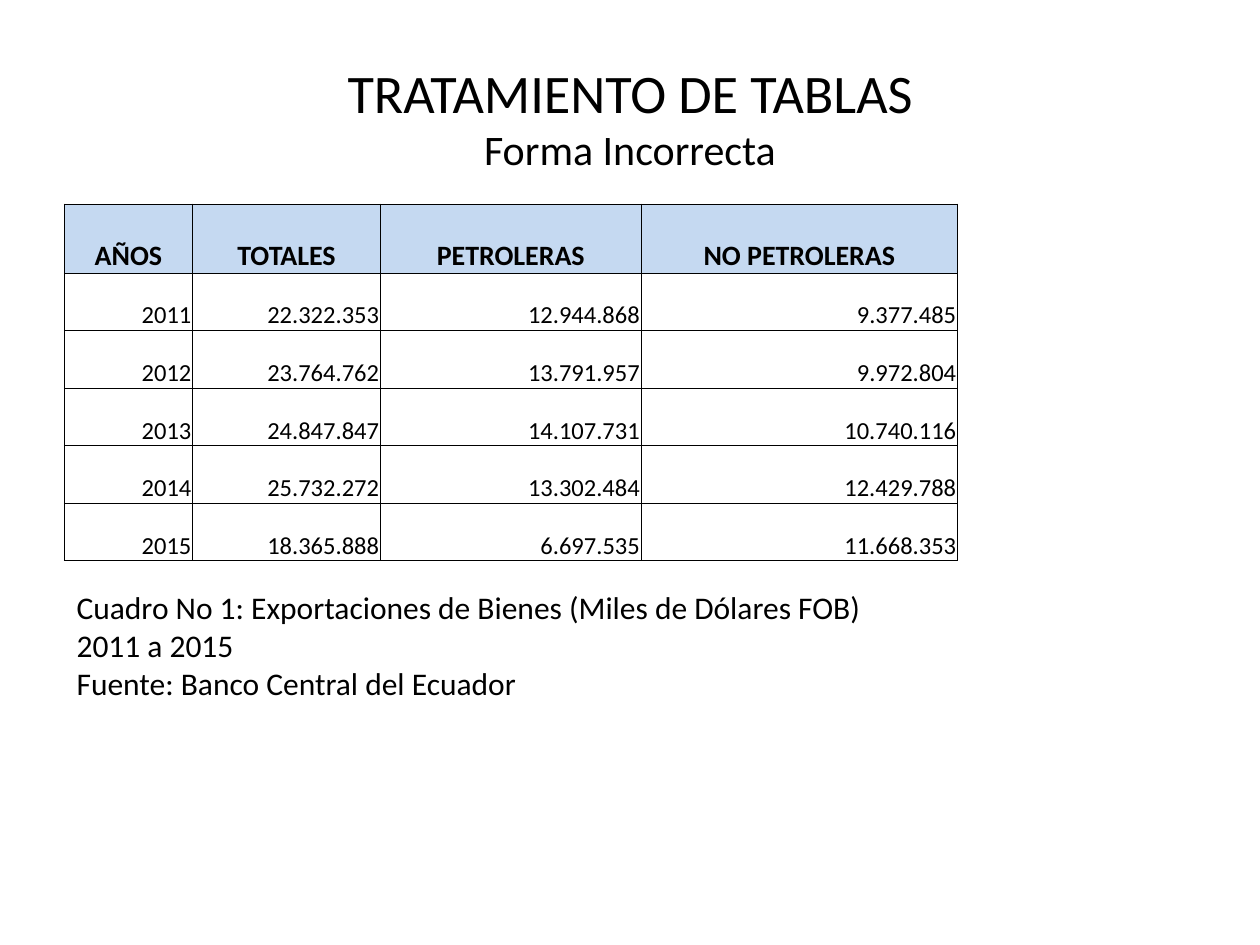
from lxml.etree import SubElement
from pptx import Presentation
from pptx.dml.color import RGBColor
from pptx.enum.text import MSO_ANCHOR as Anchor, MSO_AUTO_SIZE as AutoSize, PP_ALIGN as Align
from pptx.oxml.ns import qn
from pptx.util import Pt

# Content
TITLE = "TRATAMIENTO DE TABLAS"
SUBTITLE = "Forma Incorrecta"
HEADERS = ["AÑOS", "TOTALES", "PETROLERAS", "NO PETROLERAS"]
EXPORTS = [
    ("2011", "22.322.353", "12.944.868", "9.377.485"),
    ("2012", "23.764.762", "13.791.957", "9.972.804"),
    ("2013", "24.847.847", "14.107.731", "10.740.116"),
    ("2014", "25.732.272", "13.302.484", "12.429.788"),
    ("2015", "18.365.888", "6.697.535", "11.668.353"),
]
CAPTION = [
    "Cuadro No 1: Exportaciones de Bienes (Miles de Dólares FOB)",
    "2011 a 2015",
    "Fuente: Banco Central del Ecuador",
]

# Theme and layout, in points
THEME = {
    "font": "Calibri", "text": "000000", "header": "C5D9F1", "border": "000000",
    "title": 31, "subtitle": 24, "head": 16, "body": 14, "caption": 18,
}
LEFT = 36.7
TABLE_TOP, HEADER_H, ROW_H = 116.6, 39.4, 32.9
COL_WIDTHS = [73.4, 107.3, 149, 180.8]
BORDER_W = 0.5


def style(r, size, bold=False):
    r.font.name = THEME["font"]
    r.font.size = Pt(THEME[size])
    r.font.bold = bold
    r.font.color.rgb = RGBColor.from_string(THEME["text"])


def add_borders(cell):
    tc_pr = cell._tc.get_or_add_tcPr()
    for i, side in enumerate(("a:lnL", "a:lnR", "a:lnT", "a:lnB")):
        ln = SubElement(tc_pr, qn(side), w=str(Pt(BORDER_W)))
        fill = SubElement(ln, qn("a:solidFill"))
        SubElement(fill, qn("a:srgbClr"), val=THEME["border"])
        tc_pr.remove(ln)
        tc_pr.insert(i, ln)  # borders come before the cell fill


def fill_cell(cell, text, is_header):
    cell.margin_left = cell.margin_right = cell.margin_top = Pt(0.7)
    cell.margin_bottom = Pt(0)
    cell.vertical_anchor = Anchor.BOTTOM
    cell.text_frame.text = text
    p = cell.text_frame.paragraphs[0]
    p.alignment = Align.CENTER if is_header else Align.RIGHT
    style(p.runs[0], "head" if is_header else "body", bold=is_header)
    if is_header:
        cell.fill.solid()
        cell.fill.fore_color.rgb = RGBColor.from_string(THEME["header"])
    else:
        cell.fill.background()
    add_borders(cell)


def add_title(slide):
    sp = slide.shapes.title
    sp.left, sp.top, sp.width, sp.height = Pt(36), Pt(21.6), Pt(648), Pt(90)
    tf = sp.text_frame
    tf.auto_size = AutoSize.NONE
    tf.vertical_anchor = Anchor.MIDDLE
    tf.text = f"{TITLE}\v{SUBTITLE}"
    p = tf.paragraphs[0]
    p.alignment = Align.CENTER
    for r, size in zip(p.runs, ("title", "subtitle")):
        style(r, size)
    line_break = p._p.find(qn("a:br"))
    SubElement(line_break, qn("a:rPr"), sz=str(THEME["title"] * 100))


def add_export_table(slide):
    rows = [HEADERS, *EXPORTS]
    heights = [HEADER_H] + [ROW_H] * len(EXPORTS)
    table = slide.shapes.add_table(
        len(rows), len(HEADERS), Pt(LEFT), Pt(TABLE_TOP),
        Pt(sum(COL_WIDTHS)), Pt(sum(heights))).table
    table.horz_banding = False
    for col, width in zip(table.columns, COL_WIDTHS):
        col.width = Pt(width)
    for i, (values, height) in enumerate(zip(rows, heights)):
        table.rows[i].height = Pt(height)
        for j, text in enumerate(values):
            fill_cell(table.cell(i, j), text, is_header=i == 0)


def add_caption(slide):
    tf = slide.shapes.add_textbox(Pt(LEFT), Pt(332.6), Pt(499), Pt(72.7)).text_frame
    tf.word_wrap = True
    tf.auto_size = AutoSize.SHAPE_TO_FIT_TEXT
    tf.text = "\n".join(CAPTION)
    for p in tf.paragraphs:
        style(p.runs[0], "caption")


def main():
    prs = Presentation()
    prs.slide_width, prs.slide_height = Pt(720), Pt(540)
    slide = prs.slides.add_slide(prs.slide_layouts[5])  # title only
    add_title(slide)
    add_export_table(slide)
    add_caption(slide)
    prs.save("out.pptx")


if __name__ == "__main__":
    main()
